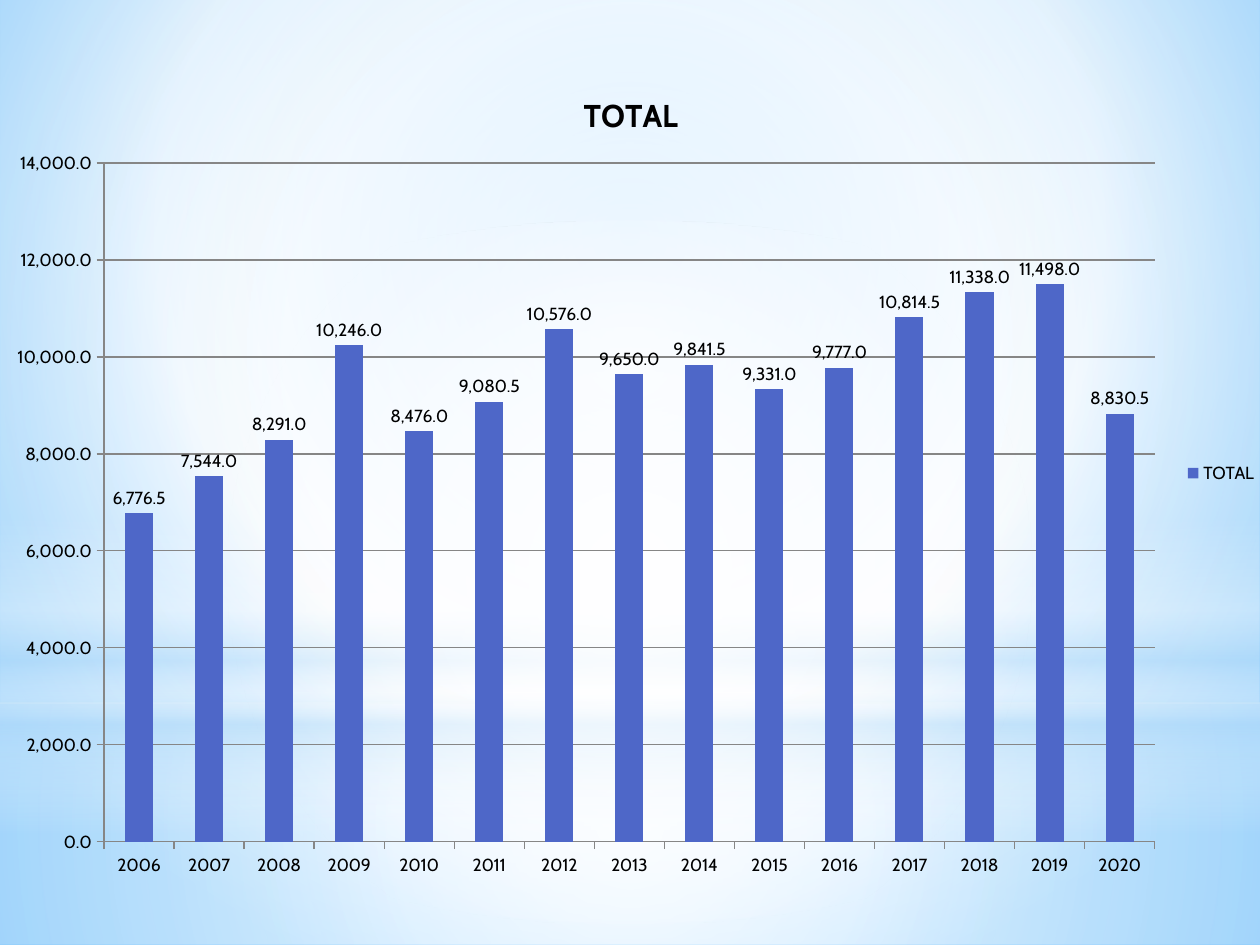
from lxml.etree import SubElement as Sub, Element as Elem
from pptx import Presentation
from pptx.chart.data import CategoryChartData as Data
from pptx.dml.color import RGBColor as RGB
from pptx.enum.chart import XL_CHART_TYPE as Kind, XL_LABEL_POSITION as Spot
from pptx.enum.chart import XL_LEGEND_POSITION as Side, XL_TICK_MARK as Tick
from pptx.enum.shapes import MSO_SHAPE as Form
from pptx.oxml.ns import qn
from pptx.util import Inches, Pt

# Content
NAME = "TOTAL"
FIRST = 2006
VALS = [6776.5, 7544, 8291, 10246, 8476, 9080.5, 10576, 9650,
        9841.5, 9331, 9777, 10814.5, 11338, 11498, 8830.5]

# Theme
THEME = {"font": "Cabin", "text": "000000", "bar": "4E67C8", "line": "868686",
         "size": 10, "title": 18, "num": "#,##0.0"}
WHITE, SKY = "FFFFFF", "B4DCFA"
MID = (50, 50, 50, 50)

# Gradient stops are (position, colour, opacity), all in percent
BACK = [(0, "9ED5FF", 100), (60, WHITE, 100), (100, "5BB9FF", 100)]
GLOWS = [  # form, box, stops, focus (None means a vertical blend)
    (Form.RECTANGLE, (0, 5.58, 10, 1.92),
     [(0, WHITE, 91), (37, WHITE, 76), (100, SKY, 79)], MID),
    (Form.RECTANGLE, (0, 0, 10, 5.58),
     [(0, WHITE, 89), (48, WHITE, 62), (100, SKY, 79)], MID),
    (Form.RECTANGLE, (0, 4.12, 10, 2.5),
     [(0, WHITE, 0), (29, WHITE, 30), (45, SKY, 40), (55, WHITE, 26),
      (65, SKY, 60), (100, WHITE, 0)], None),
    (Form.OVAL, (0, 1.75, 10, 5.58),
     [(0, WHITE, 100), (56, WHITE, 0)], MID),
]
CHART = (-0.09, 0.43, 10.17, 6.65)


def blend(fill, root, stops, focus):
    """Give the first solid fill under root a gradient instead."""
    fill.solid()
    fill.fore_color.rgb = RGB.from_string(WHITE)
    old = next(root.iter(qn("a:solidFill")))
    grad = Elem(qn("a:gradFill"), rotWithShape="1")
    rows = Sub(grad, qn("a:gsLst"))
    for pos, tint, clear in stops:
        stop = Sub(rows, qn("a:gs"), pos=str(pos * 1000))
        tone = Sub(stop, qn("a:srgbClr"), val=tint)
        if clear < 100:
            Sub(tone, qn("a:alpha"), val=str(clear * 1000))
    if focus:
        path = Sub(grad, qn("a:path"), path="circle")
        edges = {k: str(v * 1000) for k, v in zip("ltrb", focus)}
        Sub(path, qn("a:fillToRect"), **edges)
    else:
        Sub(grad, qn("a:lin"), ang="5400000", scaled="0")
    old.getparent().replace(old, grad)


def place(node, at, **spots):
    """Set a manual layout on a chart part."""
    for old in node.findall(qn("c:layout")):
        node.remove(old)
    lay = Elem(qn("c:layout"))
    man = Sub(lay, qn("c:manualLayout"))
    if "w" in spots:
        Sub(man, qn("c:layoutTarget"), val="inner")
    for key in "xy":
        Sub(man, qn(f"c:{key}Mode"), val="edge")
    for key, val in spots.items():
        Sub(man, qn(f"c:{key}"), val=str(val))
    node.insert(at, lay)


def style(font, size, bold=False):
    font.name, font.size, font.bold = THEME["font"], Pt(size), bold
    font.color.rgb = RGB.from_string(THEME["text"])


def rule(line):
    line.color.rgb = RGB.from_string(THEME["line"])
    line.width = Pt(0.75)


deck = Presentation()
deck.slide_width, deck.slide_height = Inches(10), Inches(7.5)
slide = deck.slides.add_slide(deck.slide_layouts[6])

# Background and glows
blend(slide.background.fill, slide.element, BACK, (20, 10, 20, 60))
for form, box, stops, focus in GLOWS:
    glow = slide.shapes.add_shape(form, *map(Inches, box))
    glow.shadow.inherit = False
    glow.line.fill.background()
    blend(glow.fill, glow.element, stops, focus)

# Chart
data = Data(number_format=THEME["num"])
data.categories = [str(FIRST + i) for i in range(len(VALS))]
data.add_series(NAME, VALS)
chart = slide.shapes.add_chart(
    Kind.COLUMN_CLUSTERED, *map(Inches, CHART), data).chart
style(chart.font, THEME["size"])

# Title and legend
chart.has_title = True
head = chart.chart_title.text_frame
head.text = NAME
style(head.paragraphs[0].font, THEME["title"], True)
place(next(chart.element.iter(qn("c:title"))), 1, x=0.46, y=0.04)
chart.has_legend = True
chart.legend.position = Side.RIGHT
chart.legend.include_in_layout = False

# Axes
years, scale = chart.category_axis, chart.value_axis
for axis in (years, scale):
    axis.major_tick_mark, axis.minor_tick_mark = Tick.OUTSIDE, Tick.NONE
    rule(axis.format.line)
years.has_major_gridlines = False
scale.has_major_gridlines = True
rule(scale.major_gridlines.format.line)
scale.minimum_scale, scale.maximum_scale, scale.major_unit = 0, 14000, 2000
scale.tick_labels.number_format = THEME["num"]
scale.tick_labels.number_format_is_linked = False
place(next(chart.element.iter(qn("c:plotArea"))), 0,
      x=0.09, y=0.13, w=0.82, h=0.81)

# Bars and their values
plot = chart.plots[0]
plot.gap_width, plot.vary_by_categories = 150, False
bars = plot.series[0]
bars.format.fill.solid()
bars.format.fill.fore_color.rgb = RGB.from_string(THEME["bar"])
tags = bars.data_labels
tags.show_value, tags.position = True, Spot.OUTSIDE_END
tags.number_format, tags.number_format_is_linked = THEME["num"], False
style(tags.font, THEME["size"])

deck.save("out.pptx")
